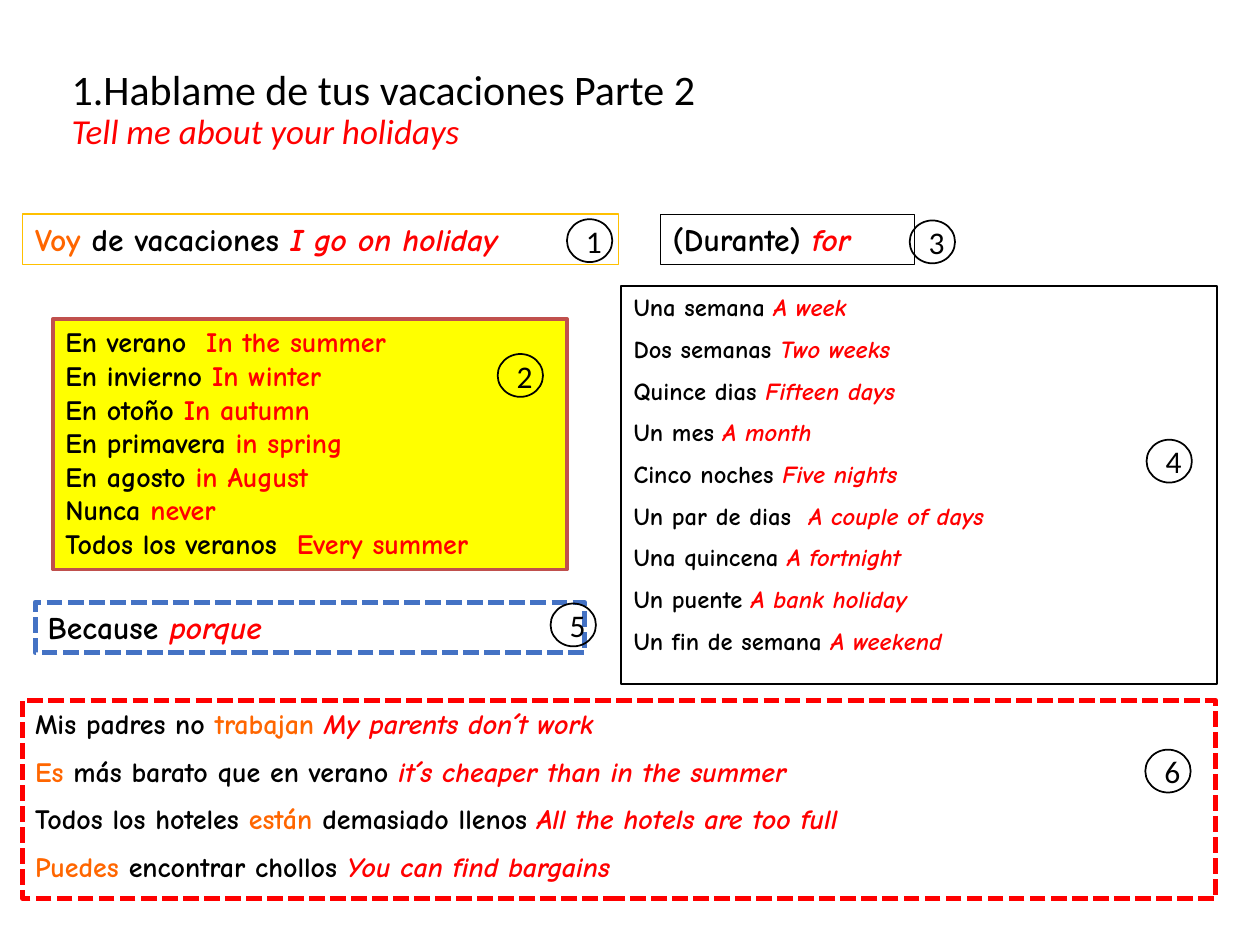
from dataclasses import dataclass
from typing import NamedTuple, Optional

from lxml import etree
from pptx import Presentation
from pptx.dml.color import RGBColor
from pptx.enum import dml, shapes, text
from pptx.oxml import ns
from pptx.util import Emu, Pt

PX = 9144  # 100 px to the inch

BLACK = RGBColor(0x00, 0x00, 0x00)
WHITE = RGBColor(0xFF, 0xFF, 0xFF)
RED = RGBColor(0xFF, 0x00, 0x00)
ORANGE = RGBColor(0xFF, 0x66, 0x00)
YELLOW = RGBColor(0xFF, 0xFF, 0x00)
GOLD = RGBColor(0xFF, 0xC0, 0x00)
BRICK = RGBColor(0xC0, 0x50, 0x4D)
BLUE = RGBColor(0x44, 0x72, 0xC4)

BODY_FONT = "Comic Neue"
PLAIN_FONT = "Calibri"
BADGE_SIZE = (36, 34)


class Span(NamedTuple):
    words: str
    color: RGBColor = BLACK
    italic: bool = False


@dataclass
class Box:
    at: tuple[int, int, int, int]
    lines: list[list[Span]]
    size: int
    border: RGBColor
    border_pt: float
    fill: Optional[RGBColor] = None
    dashed: bool = False
    spaced: bool = True


class Badge(NamedTuple):
    number: int
    left: int
    top: int


def verb(words: str) -> Span:
    return Span(words, ORANGE)


def gloss(words: str) -> Span:
    return Span(words, RED, True)


def phrase(spanish: str, english: str) -> list[Span]:
    return [Span(spanish), gloss(english)]


def season(spanish: str, english: str) -> list[Span]:
    return [Span(spanish), Span(english, RED)]


DURATIONS = [
    phrase("Una semana ", "A week"),
    phrase("Dos semanas ", "Two weeks"),
    phrase("Quince dias ", "Fifteen days"),
    phrase("Un mes ", "A month"),
    phrase("Cinco noches ", "Five nights"),
    phrase("Un par de dias  ", "A couple of days"),
    phrase("Una quincena ", "A fortnight"),
    phrase("Un puente ", "A bank holiday"),
    phrase("Un fin de semana ", "A weekend"),
]
SEASONS = [
    season("En verano  ", "In the summer"),
    season("En invierno ", "In winter"),
    season("En otoño ", "In autumn"),
    season("En primavera ", "in spring"),
    season("En agosto ", "in August"),
    season("Nunca ", "never"),
    season("Todos los veranos  ", "Every summer"),
]
REASONS = [
    [Span("Mis padres no "), verb("trabajan "), gloss("My parents don´t work")],
    [verb("Es "), Span("más barato que en verano "),
     gloss("it´s cheaper than in the summer")],
    [Span("Todos los hoteles "), verb("están "), Span("demasiado llenos "),
     gloss("All the hotels are too full")],
    [verb("Puedes "), Span("encontrar chollos "), gloss("You can find bargains")],
]
GOING = [[verb("Voy"), Span(" de vacaciones "), gloss("I go on holiday")]]

BOXES = [
    Box((493, 227, 473, 316), DURATIONS, 14, BLACK, 0.75),
    Box((42, 253, 408, 199), SEASONS, 16, BRICK, 2, YELLOW, spaced=False),
    Box((18, 170, 473, 40), GOING, 18, GOLD, 1, WHITE),
    Box((524, 170, 202, 40), [phrase("(Durante) ", "for")], 18, BLACK, 0.75),
    Box((28, 478, 436, 40), [phrase("Because ", "porque")], 18, BLUE, 3, WHITE, True),
    Box((18, 556, 947, 157), REASONS, 16, RED, 3, WHITE, True),
]
BADGES = [
    Badge(1, 450, 174), Badge(2, 395, 281), Badge(3, 722, 175),
    Badge(4, 910, 349), Badge(5, 437, 479), Badge(6, 909, 595),
]


def px(*lengths: int) -> list[Emu]:
    return [Emu(length * PX) for length in lengths]


def style_run(run, size: int, name: str, span: Span, bold: bool = False) -> None:
    font = run.font
    font.size, font.name = Pt(size), name
    font.bold, font.italic = bold, span.italic
    font.color.rgb = span.color


def add_outlined(slide, kind, at, border: RGBColor, border_pt: float,
                 fill: Optional[RGBColor] = None):
    shape = slide.shapes.add_shape(kind, *px(*at))
    shape.shadow.inherit = False
    if fill is None:
        shape.fill.background()
    else:
        shape.fill.solid()
        shape.fill.fore_color.rgb = fill
    shape.line.color.rgb = border
    shape.line.width = Pt(border_pt)
    return shape


def add_box(slide, box: Box) -> None:
    shape = add_outlined(slide, shapes.MSO_SHAPE.RECTANGLE, box.at,
                         box.border, box.border_pt, box.fill)
    if box.dashed:
        shape.line.dash_style = dml.MSO_LINE.SQUARE_DOT
    frame = shape.text_frame
    frame.word_wrap = True
    frame.auto_size = text.MSO_AUTO_SIZE.SHAPE_TO_FIT_TEXT
    frame.vertical_anchor = text.MSO_ANCHOR.TOP
    for index, line in enumerate(box.lines):
        paragraph = frame.add_paragraph() if index else frame.paragraphs[0]
        paragraph.alignment = text.PP_ALIGN.LEFT
        if box.spaced:
            paragraph.space_before = Pt(box.size / 2)
        for span in line:
            run = paragraph.add_run()
            run.text = span.words
            style_run(run, box.size, BODY_FONT, span, bold=True)


def add_badge(slide, badge: Badge) -> None:
    shape = add_outlined(slide, shapes.MSO_SHAPE.OVAL,
                         (badge.left, badge.top, *BADGE_SIZE), BLACK, 1)
    frame = shape.text_frame
    frame.text = str(badge.number)
    frame.vertical_anchor = text.MSO_ANCHOR.MIDDLE
    paragraph = frame.paragraphs[0]
    paragraph.alignment = text.PP_ALIGN.CENTER
    digit = paragraph.runs[0]
    style_run(digit, 18, PLAIN_FONT, Span(frame.text))
    # Thin black outline around the digit
    outline = etree.Element(ns.qn("a:ln"), w=str(Pt(0.75)))
    solid = etree.SubElement(outline, ns.qn("a:solidFill"))
    etree.SubElement(solid, ns.qn("a:srgbClr"), val=str(BLACK))
    digit.font._element.insert(0, outline)


def add_title(slide) -> None:
    frame = slide.shapes.add_textbox(*px(47, 37, 748, 101)).text_frame
    frame.word_wrap = True
    frame.vertical_anchor = text.MSO_ANCHOR.MIDDLE
    paragraph = frame.paragraphs[0]
    paragraph.line_spacing = 0.9
    heading = Span("1.Hablame de tus vacaciones Parte 2 ")
    translation = gloss("Tell me about your holidays")
    paragraph.text = f"{heading.words}\v{translation.words}"
    for run, span, size in zip(paragraph.runs, (heading, translation), (24, 20)):
        style_run(run, size, PLAIN_FONT, span)


def main() -> None:
    deck = Presentation()
    deck.slide_width, deck.slide_height = px(1000, 750)
    slide = deck.slides.add_slide(deck.slide_layouts[6])

    # Phrase boxes, numbered badges, then the heading
    for box in BOXES:
        add_box(slide, box)
    for badge in BADGES:
        add_badge(slide, badge)
    add_title(slide)
    deck.save("out.pptx")


if __name__ == "__main__":
    main()
